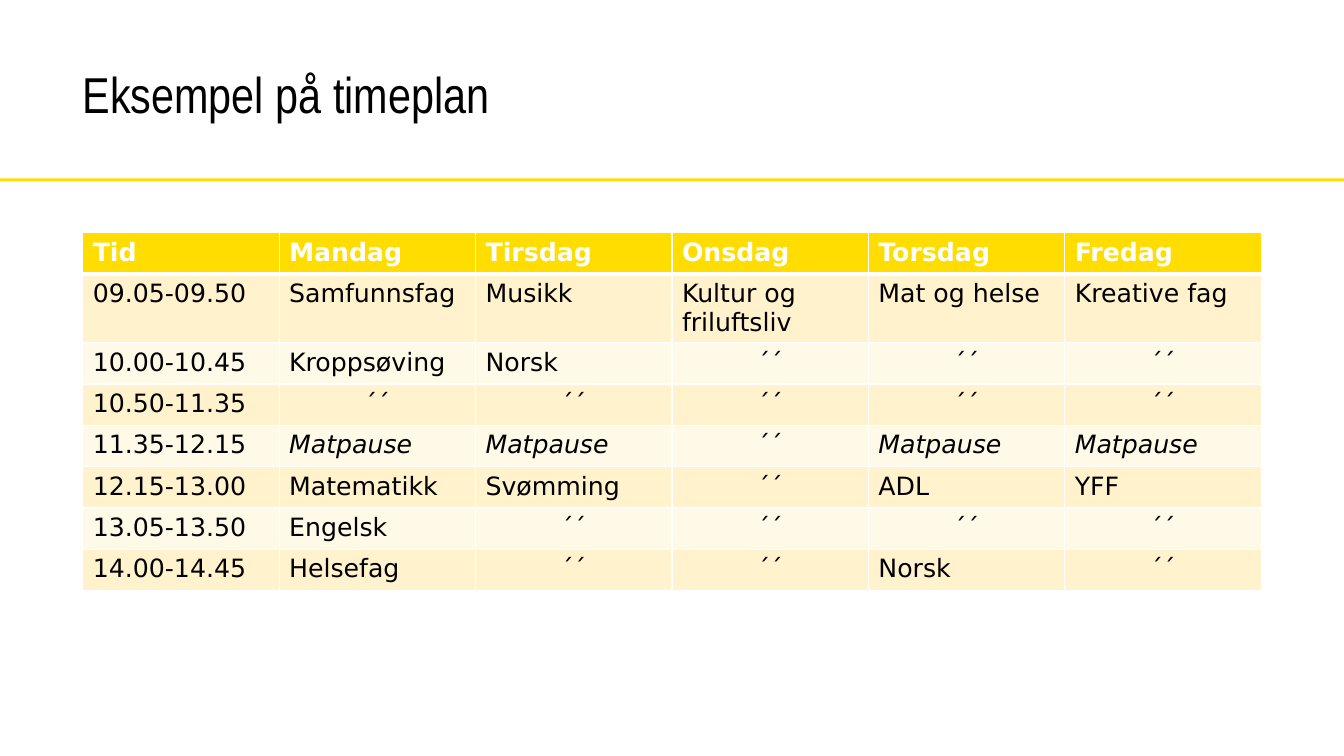
"""Builds a slide with a weekly school timetable."""
from lxml import etree
from pptx import Presentation
from pptx import util as u
from pptx.dml.color import RGBColor
from pptx.enum import shapes, text
from pptx.oxml.ns import qn

TITLE = "Eksempel på timeplan"
DITTO = "´´"
BREAK = "Matpause"
ROWS = [
    ("Tid", "Mandag", "Tirsdag", "Onsdag", "Torsdag", "Fredag"),
    ("09.05-09.50", "Samfunnsfag", "Musikk", "Kultur og friluftsliv", "Mat og helse", "Kreative fag"),
    ("10.00-10.45", "Kroppsøving", "Norsk", DITTO, DITTO, DITTO),
    ("10.50-11.35", DITTO, DITTO, DITTO, DITTO, DITTO),
    ("11.35-12.15", BREAK, BREAK, DITTO, BREAK, BREAK),
    ("12.15-13.00", "Matematikk", "Svømming", DITTO, "ADL", "YFF"),
    ("13.05-13.50", "Engelsk", DITTO, DITTO, DITTO, DITTO),
    ("14.00-14.45", "Helsefag", DITTO, DITTO, "Norsk", DITTO),
]
YELLOW, WHITE, BLACK = "FFDD00", "FFFFFF", "000000"
BANDS = ("FFF9E7", "FFF2CC")
WIDTH, HEIGHT = 13.33, 7.5
LEFT, TABLE_TOP, TABLE_WIDTH = 0.82, 2.31, 11.69
ROW_HEIGHTS = [0.41, 0.67] + [0.41] * (len(ROWS) - 2)


def color(value):
    return RGBColor.from_string(value)


def style(p, name, size, value):
    for r in p.runs:
        r.font.name = name
        r.font.size = u.Pt(size)
        r.font.color.rgb = color(value)


def add_borders(cell, top, bottom):
    props = cell._tc.get_or_add_tcPr()
    for i, (side, width) in enumerate((("L", 1), ("R", 1), ("T", top), ("B", bottom))):
        line = etree.Element(qn("a:ln" + side), w=str(u.Pt(width)))
        fill = etree.SubElement(line, qn("a:solidFill"))
        etree.SubElement(fill, qn("a:srgbClr"), val=WHITE)
        props.insert(i, line)


def add_rule(s):
    sp = s.shapes.add_shape(shapes.MSO_SHAPE.RECTANGLE, 0, u.Inches(1.77), u.Inches(WIDTH), u.Inches(0.03))
    sp.shadow.inherit = False
    sp.fill.solid()
    sp.fill.fore_color.rgb = color(YELLOW)
    sp.line.fill.background()


def add_title(s):
    tf = s.shapes.add_textbox(u.Inches(LEFT), u.Inches(0.36), u.Inches(10.5), u.Inches(1.21)).text_frame
    tf.word_wrap = True
    tf.vertical_anchor = text.MSO_ANCHOR.MIDDLE
    tf.margin_left = tf.margin_top = tf.margin_right = tf.margin_bottom = 0
    p = tf.paragraphs[0]
    p.text = TITLE
    p.line_spacing = 0.9
    style(p, "Arial Narrow", 36, BLACK)


def add_timetable(s):
    table = s.shapes.add_table(
        len(ROWS), len(ROWS[0]), u.Inches(LEFT), u.Inches(TABLE_TOP),
        u.Inches(TABLE_WIDTH), u.Inches(sum(ROW_HEIGHTS))).table
    for i, (row, height) in enumerate(zip(ROWS, ROW_HEIGHTS)):
        table.rows[i].height = u.Inches(height)
        for j, label in enumerate(row):
            cell = table.cell(i, j)
            cell.fill.solid()
            cell.fill.fore_color.rgb = color(BANDS[i % 2] if i else YELLOW)
            add_borders(cell, 3 if i == 1 else 1, 1 if i else 3)
            p = cell.text_frame.paragraphs[0]
            p.text = label
            if label == DITTO:
                p.alignment = text.PP_ALIGN.CENTER
            style(p, "DejaVu Sans", 18, BLACK if i else WHITE)
            p.runs[0].font.bold = i == 0
            p.runs[0].font.italic = label == BREAK


def main():
    prs = Presentation()
    prs.slide_width, prs.slide_height = u.Inches(WIDTH), u.Inches(HEIGHT)
    s = prs.slides.add_slide(prs.slide_layouts[6])
    add_rule(s)
    add_timetable(s)
    add_title(s)
    prs.save("out.pptx")


if __name__ == "__main__":
    main()
